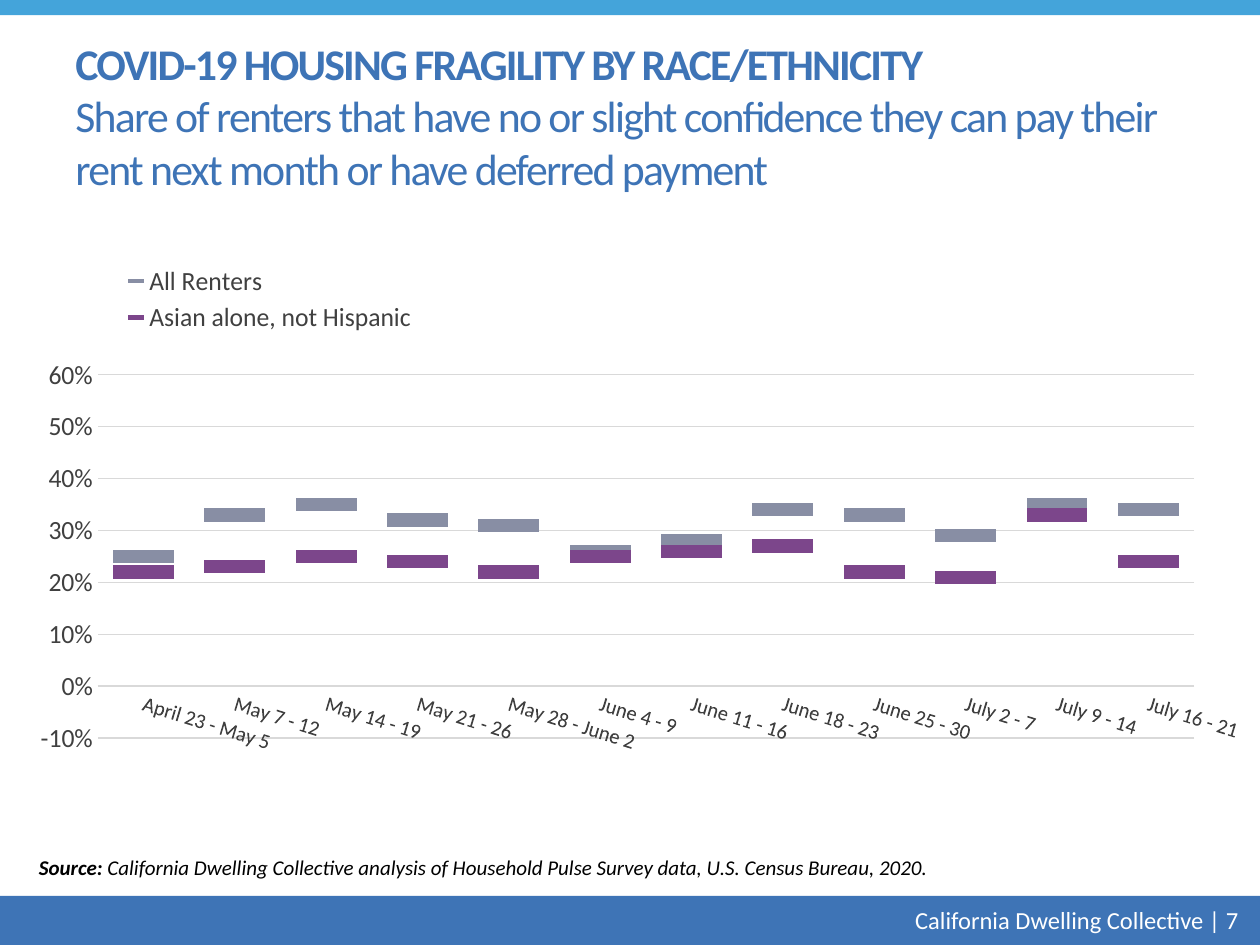
from typing import NamedTuple

from lxml import etree
from pptx import Presentation
from pptx.chart.data import CategoryChartData
from pptx.dml.color import RGBColor
from pptx.enum.chart import (XL_CHART_TYPE, XL_LEGEND_POSITION,
                             XL_MARKER_STYLE, XL_TICK_MARK)
from pptx.enum.shapes import MSO_SHAPE
from pptx.enum.text import MSO_ANCHOR, PP_ALIGN
from pptx.util import Inches, Pt

RECT = MSO_SHAPE.RECTANGLE
LINE = XL_CHART_TYPE.LINE_MARKERS
DASH = XL_MARKER_STYLE.DASH
BOTTOM = XL_LEGEND_POSITION.BOTTOM
NO_TICK = XL_TICK_MARK.NONE
LEFT, RIGHT = PP_ALIGN.LEFT, PP_ALIGN.RIGHT
TOP, MIDDLE = MSO_ANCHOR.TOP, MSO_ANCHOR.MIDDLE

FONT = "Calibri"
BLUE, SKY, WHITE, BLACK = "3E74B6", "44A4DA", "FFFFFF", "000000"
GREY, GRID = "404040", "D9D9D9"
C_NS = "http://schemas.openxmlformats.org/drawingml/2006/chart"


class Box(NamedTuple):
    left: float
    top: float
    width: float
    height: float

    def inches(self) -> list:
        return [Inches(v) for v in self]


class Run(NamedTuple):
    text: str
    bold: bool = False


class Group(NamedTuple):
    name: str
    color: str
    shares: list


WEEKS = ["April 23 - May 5", "May 7 - 12", "May 14 - 19", "May 21 - 26",
         "May 28 - June 2", "June 4 - 9", "June 11 - 16", "June 18 - 23",
         "June 25 - 30", "July 2 - 7", "July 9 - 14", "July 16 - 21"]
GROUPS = [
    Group("All Renters", "888EA4",
          [.25, .33, .35, .32, .31, .26, .28, .34, .33, .29, .35, .34]),
    Group("Asian alone, not Hispanic", "7C468B",
          [.22, .23, .25, .24, .22, .25, .26, .27, .22, .21, .33, .24]),
]


def rgb(code: str) -> RGBColor:
    return RGBColor.from_string(code)


def style(font, size: float, color: str) -> None:
    font.name, font.size = FONT, Pt(size)
    font.color.rgb = rgb(color)


def add_bar(slide, box: Box, color: str) -> None:
    bar = slide.shapes.add_shape(RECT, *box.inches())
    bar.shadow.inherit = False
    bar.fill.solid()
    bar.fill.fore_color.rgb = rgb(color)
    bar.line.fill.background()


def add_text(slide, box: Box, lines: list, *, size: float, color: str,
             align=LEFT, anchor=TOP, italic=False, track=0) -> None:
    """Add one paragraph; each item of lines is a list of runs on its own line."""
    frame = slide.shapes.add_textbox(*box.inches()).text_frame
    frame.word_wrap = True
    frame.vertical_anchor = anchor
    para = frame.paragraphs[0]
    para.alignment = align
    for i, line in enumerate(lines):
        if i:
            para.add_line_break()
        for part in line:
            run = para.add_run()
            run.text = part.text
            style(run.font, size, color)
            run.font.bold, run.font.italic = part.bold, italic
            if track:
                run.font._element.set("spc", str(track))


def place(parent, after: str, box: Box, inner=False) -> None:
    """Fix a chart part by fractions of the chart's size."""
    for old in parent.findall(f"{{{C_NS}}}layout"):
        parent.remove(old)
    layout = etree.Element(f"{{{C_NS}}}layout")
    manual = etree.SubElement(layout, f"{{{C_NS}}}manualLayout")
    items = [("layoutTarget", "inner")] if inner else []
    items += [("xMode", "edge"), ("yMode", "edge")]
    items += zip("xywh", box)
    for tag, val in items:
        etree.SubElement(manual, f"{{{C_NS}}}{tag}").set("val", str(val))
    if after:
        parent.find(f"{{{C_NS}}}{after}").addnext(layout)
    else:
        parent.insert(0, layout)


def add_chart(slide, box: Box) -> None:
    data = CategoryChartData(number_format="0%")
    data.categories = WEEKS
    for group in GROUPS:
        data.add_series(group.name, group.shares)
    chart = slide.shapes.add_chart(LINE, *box.inches(), data).chart
    style(chart.font, 15, GREY)
    chart.has_title = False

    plot = chart.plots[0]
    plot.vary_by_categories = False
    for group, series in zip(GROUPS, plot.series):
        series.smooth = False
        series.format.line.fill.background()
        mark = series.marker
        mark.style, mark.size = DASH, 35
        mark.format.fill.solid()
        mark.format.fill.fore_color.rgb = rgb(group.color)
        mark.format.line.fill.background()

    weeks, shares = chart.category_axis, chart.value_axis
    for axis, size in ((weeks, 12), (shares, 15)):
        axis.major_tick_mark = axis.minor_tick_mark = NO_TICK
        style(axis.tick_labels.font, size, GREY)
    weeks._element.txPr.bodyPr.set("rot", str(17 * 60000))
    shares.minimum_scale, shares.maximum_scale = -0.1, 0.6
    shares.major_unit = 0.1
    shares.tick_labels.number_format = "0%"
    shares.tick_labels.number_format_is_linked = False
    shares.format.line.fill.background()
    for line in (weeks.format.line, shares.major_gridlines.format.line):
        line.color.rgb, line.width = rgb(GRID), Pt(0.75)

    chart.has_legend = True
    legend = chart.legend
    legend.position, legend.include_in_layout = BOTTOM, False
    style(legend.font, 15, GREY)
    place(legend._element, "legendPos", Box(0.08, 0.03, 0.26, 0.13))
    area = chart._chartSpace.find(f".//{{{C_NS}}}plotArea")
    place(area, "", Box(0.066, 0.222, 0.918, 0.612), inner=True)


def main() -> None:
    deck = Presentation()
    deck.slide_width, deck.slide_height = Inches(10), Inches(7.5)
    slide = deck.slides.add_slide(deck.slide_layouts[6])
    add_bar(slide, Box(0, 7.11, 10, 0.4), BLUE)
    add_bar(slide, Box(0, 0, 10, 0.12), SKY)
    add_text(slide, Box(6.41, 7.12, 3.52, 0.36),
             [[Run("California Dwelling Collective | 7")]],
             size=14, color=WHITE, align=RIGHT, anchor=MIDDLE)
    add_text(slide, Box(0.5, 0.58, 9.18, 0.67),
             [[Run("COVID-19 HOUSING FRAGILITY BY RACE/ETHNICITY", True)],
              [Run("Share of renters that have no or slight confidence they "
                   "can pay their rent next month or have deferred payment")]],
             size=25, color=BLUE, anchor=MIDDLE, track=-100)
    add_chart(slide, Box(0.15, 1.93, 9.7, 4.71))
    add_text(slide, Box(0.21, 6.73, 9.26, 0.3),
             [[Run("Source: ", True),
               Run("California Dwelling Collective analysis of Household Pulse "
                   "Survey data, U.S. Census Bureau, 2020.")]],
             size=12, color=BLACK, italic=True)
    deck.save("out.pptx")


if __name__ == "__main__":
    main()
